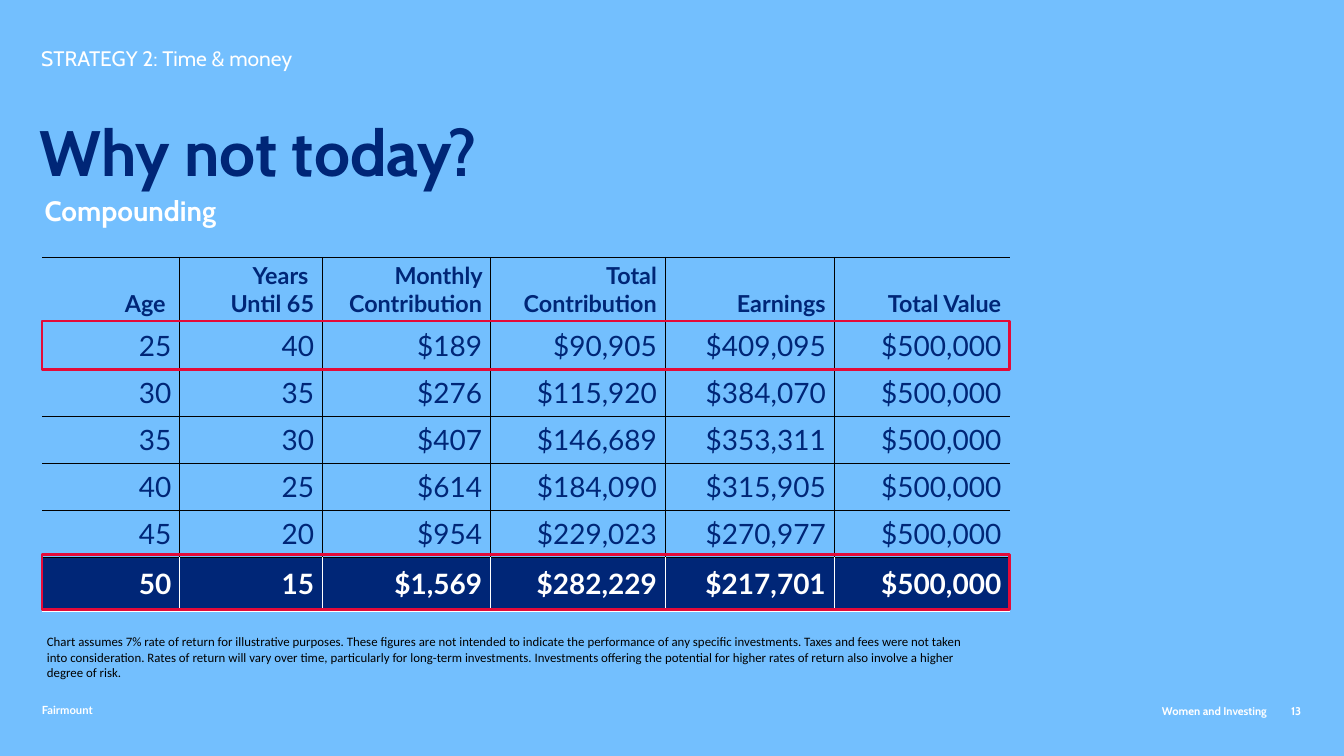
import pptx
import pptx.dml.color
import pptx.enum.shapes
import pptx.enum.text
import pptx.oxml
import pptx.oxml.ns
import pptx.util

Inches, Pt = pptx.util.Inches, pptx.util.Pt
ALIGN, ANCHOR = pptx.enum.text.PP_ALIGN, pptx.enum.text.MSO_ANCHOR

SKY, NAVY, WHITE, BLACK, RED = "73BFFE", "002677", "FFFFFF", "000000", "E40A38"

# Content
STRATEGY = "STRATEGY 2: Time & money"
HEADLINE = "Why not today?"
SUBHEAD = "Compounding"
NOTE = ("Chart assumes 7% rate of return for illustrative purposes. These figures are not "
        "intended to indicate the performance of any specific investments. Taxes and fees were "
        "not taken into consideration. Rates of return will vary over time, particularly for "
        "long-term investments. Investments offering the potential for higher rates of return "
        "also involve a higher degree of risk.")
COMPANY, DECK, PAGE = "Fairmount", "Women and Investing", "13"
ROWS = [
    ["Age ", "Years \nUntil 65", "Monthly Contribution", "Total Contribution", "Earnings",
     "Total Value"],
    ["25", "40", "$189", "$90,905", "$409,095", "$500,000"],
    ["30", "35", "$276", "$115,920", "$384,070", "$500,000"],
    ["35", "30", "$407", "$146,689", "$353,311", "$500,000"],
    ["40", "25", "$614", "$184,090", "$315,905", "$500,000"],
    ["45", "20", "$954", "$229,023", "$270,977", "$500,000"],
    ["50", "15", "$1,569", "$282,229", "$217,701", "$500,000"],
]
COL_WIDTHS = [1.64, 1.7, 2, 2.08, 2.01, 2.09]
ROW_HEIGHTS = [0.72] + [0.56] * 5 + [0.65]
TABLE_LEFT, TABLE_TOP, TABLE_WIDTH = 0.5, 3.06, sum(COL_WIDTHS)
HIGHLIGHTS = [(3.82, 0.58), (6.6, 0.66)]
NO_STYLE = "{2D5ABB26-0587-4C30-8999-92F81FD0307C}"


def rgb(value):
    return pptx.dml.color.RGBColor.from_string(value)


def write(tf, text, size, font, color, bold=False, align=ALIGN.LEFT, spacing=None):
    p = tf.paragraphs[0]
    p.alignment = align
    p.space_before = Pt(0)
    if spacing:
        p.line_spacing = spacing
    for i, line in enumerate(text.split("\n")):
        if i:
            p.add_line_break()
        r = p.add_run()
        r.text = line
        r.font.size, r.font.name, r.font.bold = Pt(size), font, bold
        r.font.color.rgb = rgb(color)


def fit(sp, box, anchor):
    sp.left, sp.top, sp.width, sp.height = [Inches(v) for v in box]
    tf = sp.text_frame
    tf.word_wrap = True
    tf.auto_size = pptx.enum.text.MSO_AUTO_SIZE.NONE
    tf.vertical_anchor = anchor
    return tf


def border(cell, sides, color, width):
    tc_pr = cell._tc.get_or_add_tcPr()
    for side in ("L", "R", "T", "B"):
        if side in sides:
            tc_pr.append(pptx.oxml.parse_xml(
                f'<a:ln{side} {pptx.oxml.ns.nsdecls("a")} w="{Pt(width)}"><a:solidFill>'
                f'<a:srgbClr val="{color}"/></a:solidFill></a:ln{side}>'))


prs = pptx.Presentation()
prs.slide_width, prs.slide_height = Inches(16), Inches(9)
slide = prs.slides.add_slide(prs.slide_layouts.get_by_name("Comparison"))
slide.background.fill.solid()
slide.background.fill.fore_color.rgb = rgb(SKY)

# Headings in the title and the two text placeholders
ph = {sp.placeholder_format.idx: sp for sp in slide.placeholders}
for idx in (2, 4):
    ph[idx].element.getparent().remove(ph[idx].element)
HEADINGS = [
    (0, STRATEGY, (0.39, 0.57, 3.46, 0.33), ANCHOR.BOTTOM, 18, WHITE, False),
    (1, HEADLINE, (0.37, 1.39, 7.13, 0.77), ANCHOR.TOP, 55, NAVY, True),
    (3, SUBHEAD, (0.43, 2.3, 7.92, 0.48), ANCHOR.TOP, 24, WHITE, True),
]
for idx, text, box, anchor, size, color, bold in HEADINGS:
    write(fit(ph[idx], box, anchor), text, size, "Cabin", color, bold, spacing=0.9)

# Footnote and footer
SMALL_TEXT = [
    (NOTE, (0.46, 7.5, 11.37, 0.35), ANCHOR.TOP, 11, "Calibri", BLACK, False, ALIGN.LEFT),
    (COMPANY, (0.4, 8.33, 2.48, 0.24), ANCHOR.MIDDLE, 9.6, "Lato", WHITE, True, ALIGN.LEFT),
    (DECK, (9.78, 8.34, 5.4, 0.24), ANCHOR.MIDDLE, 9.6, "Cabin", WHITE, True, ALIGN.RIGHT),
    (PAGE, (15.19, 8.33, 0.4, 0.19), ANCHOR.TOP, 9.6, "Cabin", WHITE, True, ALIGN.RIGHT),
]
for text, box, anchor, *style in SMALL_TEXT:
    sp = slide.shapes.add_textbox(0, 0, 0, 0)
    write(fit(sp, box, anchor), text, *style)

# Table
last_row, last_col = len(ROWS) - 1, len(COL_WIDTHS) - 1
frame = slide.shapes.add_table(len(ROWS), len(COL_WIDTHS), Inches(TABLE_LEFT), Inches(TABLE_TOP),
                               Inches(TABLE_WIDTH), Inches(sum(ROW_HEIGHTS)))
table = frame.table
table.first_row = table.horz_banding = False
table._tbl.tblPr.find(pptx.oxml.ns.qn("a:tableStyleId")).text = NO_STYLE
for col, width in zip(table.columns, COL_WIDTHS):
    col.width = Inches(width)
for row, height in zip(table.rows, ROW_HEIGHTS):
    row.height = Inches(height)
for i, values in enumerate(ROWS):
    header, total = i == 0, i == last_row
    for j, value in enumerate(values):
        cell = table.cell(i, j)
        cell.vertical_anchor = ANCHOR.BOTTOM if header else ANCHOR.MIDDLE
        write(cell.text_frame, value, 20 if header else 24, "Lato", WHITE if total else NAVY,
              header or total, ALIGN.RIGHT)
        if total:
            border(cell, "LR", WHITE, 1)
            border(cell, "T", BLACK, 0.5)
            border(cell, "B", WHITE, 1)
            cell.fill.solid()
            cell.fill.fore_color.rgb = rgb(NAVY)
        else:
            inner = ("L" if j > 0 else "") + ("R" if j < last_col else "")
            border(cell, inner + "TB", BLACK, 0.5)
            cell.fill.background()

# Red frames around the first and last ages
for top, height in HIGHLIGHTS:
    sp = slide.shapes.add_shape(pptx.enum.shapes.MSO_SHAPE.RECTANGLE, Inches(TABLE_LEFT),
                                Inches(top), Inches(TABLE_WIDTH), Inches(height))
    sp.shadow.inherit = False
    sp.fill.background()
    sp.line.color.rgb = rgb(RED)
    sp.line.width = Pt(2.25)

prs.save("out.pptx")
